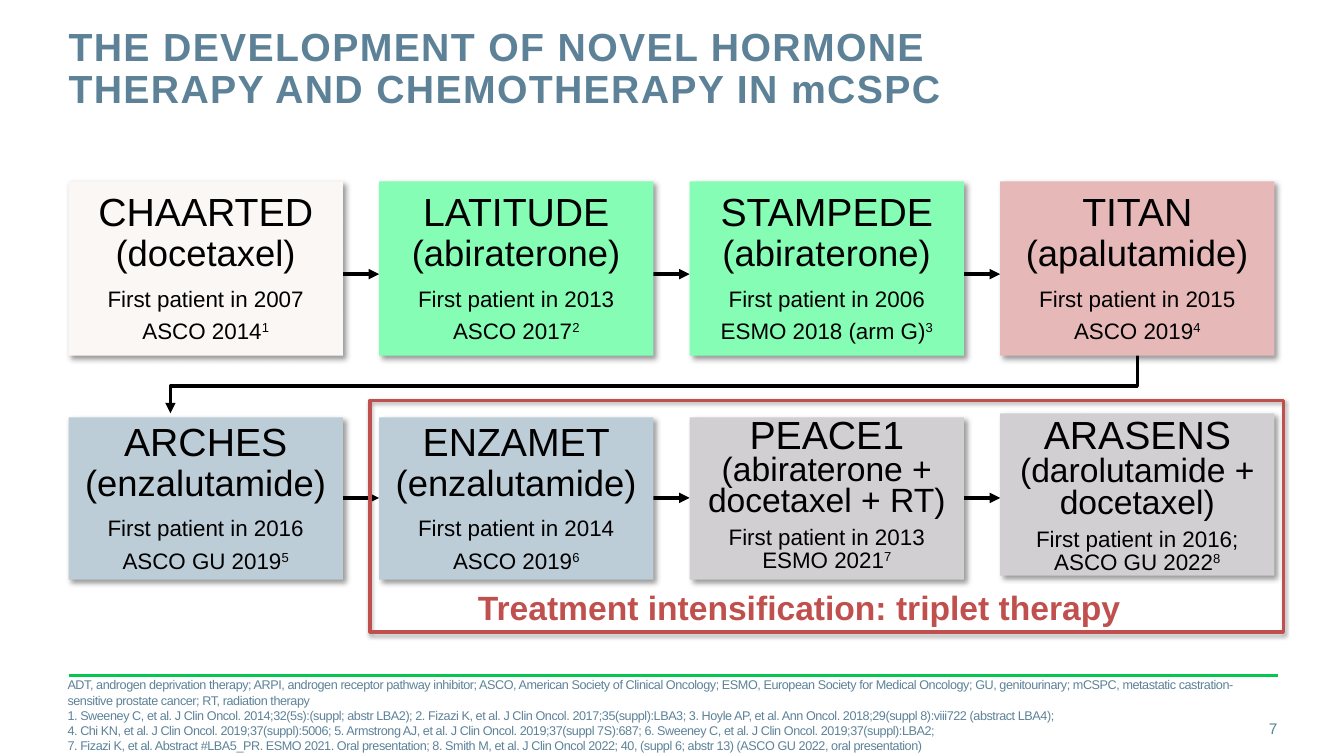
from itertools import pairwise

from lxml.etree import SubElement
from pptx import Presentation
from pptx.dml.color import RGBColor
from pptx.enum.shapes import MSO_CONNECTOR, MSO_SHAPE
from pptx.enum.text import MSO_ANCHOR, PP_ALIGN
from pptx.oxml.ns import qn
from pptx.util import Inches, Pt

SLATE, RED, BLACK = "5D8298", "C0504D", "000000"
CARD_LEFT, CARD_WIDTH, CARD_PITCH = 0.68, 2.72, 3.08

FIRST_ROW = [
    ("CHAARTED", "(docetaxel)", "First patient in 2007", "ASCO 2014", "1", "FBF7F5"),
    ("LATITUDE", "(abiraterone)", "First patient in 2013", "ASCO 2017", "2", "86FDB4"),
    ("STAMPEDE", "(abiraterone)", "First patient in 2006", "ESMO 2018 (arm G)", "3", "86FDB4"),
    ("TITAN", "(apalutamide)", "First patient in 2015", "ASCO 2019", "4", "E6B9B8"),
]
SECOND_ROW = [
    ("ARCHES", "(enzalutamide)", "First patient in 2016", "ASCO GU 2019", "5", "BDCDD7"),
    ("ENZAMET", "(enzalutamide)", "First patient in 2014", "ASCO 2019", "6", "BDCDD7"),
]
TRIPLETS = [
    ("PEACE1", "(abiraterone + docetaxel + RT)", "First patient in 2013", "ESMO 2021", "7"),
    ("ARASENS", "(darolutamide + docetaxel)", "First patient in 2016;", "ASCO GU 2022", "8"),
]
FOOTNOTES = [
    "ADT, androgen deprivation therapy; ARPI, androgen receptor pathway inhibitor; ASCO, American Society of Clinical Oncology; ESMO, European Society for Medical Oncology; GU, genitourinary; mCSPC, metastatic castration-sensitive prostate cancer; RT, radiation therapy",
    "1. Sweeney C, et al. J Clin Oncol. 2014;32(5s):(suppl; abstr LBA2); 2. Fizazi K, et al. J Clin Oncol. 2017;35(suppl):LBA3; 3. Hoyle AP, et al. Ann Oncol. 2018;29(suppl 8):viii722 (abstract LBA4);",
    "4. Chi KN, et al. J Clin Oncol. 2019;37(suppl):5006; 5. Armstrong AJ, et al. J Clin Oncol. 2019;37(suppl 7S):687; 6. Sweeney C, et al. J Clin Oncol. 2019;37(suppl):LBA2;",
    "7. Fizazi K, et al. Abstract #LBA5_PR. ESMO 2021. Oral presentation; 8. Smith M, et al. J Clin Oncol 2022; 40, (suppl 6; abstr 13) (ASCO GU 2022, oral presentation)",
]


def color(hex_value):
    """Turn a hex string into a colour."""
    return RGBColor.from_string(hex_value)


def style_font(font, size, ink, bold=False):
    """Apply the slide's typeface with a size and colour."""
    font.name, font.size, font.bold = "Arial", Pt(size), bold
    font.color.rgb = color(ink)


def add_shadow(shape, opacity, blur, distance, angle):
    """Give a shape a soft black outer shadow."""
    shape.shadow.inherit = False
    effects = shape._element.spPr.find(qn("a:effectLst"))
    shadow = SubElement(effects, qn("a:outerShdw"), blurRad=str(Pt(blur)),
                        dist=str(Pt(distance)), dir=str(angle * 60000),
                        algn="tl", rotWithShape="0")
    ink = SubElement(shadow, qn("a:srgbClr"), val=BLACK)
    SubElement(ink, qn("a:alpha"), val=str(opacity * 1000))


def add_text(slide, box, lines, size, ink, bold=False, tracking=0, leading=None,
             align=PP_ALIGN.LEFT, anchor=MSO_ANCHOR.TOP):
    """Write one paragraph per line in a box without margins."""
    frame = slide.shapes.add_textbox(*map(Inches, box)).text_frame
    frame.word_wrap, frame.vertical_anchor = True, anchor
    frame.margin_left = frame.margin_right = frame.margin_top = frame.margin_bottom = 0
    for index, line in enumerate(lines):
        paragraph = frame.add_paragraph() if index else frame.paragraphs[0]
        paragraph.alignment, paragraph.line_spacing = align, leading
        run = paragraph.add_run()
        run.text = line
        if tracking:
            run._r.get_or_add_rPr().set("spc", str(tracking))
        style_font(paragraph.font, size, ink, bold)


def add_line(slide, start, end, ink, weight):
    """Draw a straight line without a shadow."""
    line = slide.shapes.add_connector(MSO_CONNECTOR.STRAIGHT,
                                      *map(Inches, (*start, *end)))
    line.line.color.rgb, line.line.width = color(ink), Pt(weight)
    SubElement(line._element.spPr, qn("a:effectLst"))
    return line


def add_arrowhead(shape):
    """Put a triangle at the end of a line."""
    SubElement(shape.line._get_or_add_ln(), qn("a:tailEnd"), type="triangle")


def add_row_arrows(slide, y):
    """Link the four cards of a row from left to right."""
    lefts = [CARD_LEFT + CARD_PITCH * column for column in range(4)]
    for left, following in pairwise(lefts):
        add_arrowhead(add_line(slide, (left + CARD_WIDTH - 0.2, y), (following, y), BLACK, 2.5))


def add_return_arrow(slide):
    """Lead from the end of the first row to the start of the second."""
    corners = [(Inches(x), Inches(y)) for x, y in
               [(11.28, 3.52), (11.28, 3.83), (1.69, 3.83), (1.69, 4.1)]]
    builder = slide.shapes.build_freeform(*corners[0])
    builder.add_line_segments(corners[1:], close=False)
    route = builder.convert_to_shape()
    route.shadow.inherit = False
    route.fill.background()
    route.line.color.rgb, route.line.width = color(BLACK), Pt(2.5)
    add_arrowhead(route)


def add_card(slide, column, top, height, fill, top_margin=0.09):
    """Draw an empty trial card and return its text frame."""
    card = slide.shapes.add_shape(
        MSO_SHAPE.RECTANGLE, Inches(CARD_LEFT + CARD_PITCH * column), Inches(top),
        Inches(CARD_WIDTH), Inches(height))
    card.fill.solid()
    card.fill.fore_color.rgb = color(fill)
    card.line.fill.background()
    add_shadow(card, 40, 4, 3, 45)
    frame = card.text_frame
    frame.word_wrap, frame.vertical_anchor = True, MSO_ANCHOR.MIDDLE
    frame.margin_left = frame.margin_right = frame.margin_bottom = Inches(0.09)
    frame.margin_top = Inches(top_margin)
    return frame


def fill_paragraph(paragraph, runs, leading, after):
    """Write centred runs of (text, size, raised), with breaks at None."""
    paragraph.alignment = PP_ALIGN.CENTER
    paragraph.line_spacing, paragraph.space_after = leading, Pt(after)
    for part in runs:
        if part is None:
            paragraph.add_line_break()
            continue
        text, size, raised = part
        run = paragraph.add_run()
        run.text = text
        style_font(run.font, size, BLACK)
        if raised:
            run._r.get_or_add_rPr().set("baseline", "30000")


def add_trial(slide, column, top, height, trial):
    """Add a card for a trial of one drug."""
    name, drug, start, venue, reference, fill = trial
    frame = add_card(slide, column, top, height, fill)
    fill_paragraph(frame.paragraphs[0], [(name, 28, False), None, (drug, 26, False)], 0.9, 9.5)
    fill_paragraph(frame.add_paragraph(), [(start, 16, False)], 0.9, 6)
    fill_paragraph(frame.add_paragraph(), [(venue, 16, False), (reference, 16, True)], 0.9, 6)


def add_triplet(slide, column, top, margin, leading, after, trial):
    """Add a card for a trial of a drug combination."""
    name, drugs, start, venue, reference = trial
    frame = add_card(slide, column, top, 1.61, "D1CFD1", margin)
    fill_paragraph(frame.paragraphs[0], [(name, 28, False), None, (drugs, 24, False)],
                   Pt(leading), 6)
    fill_paragraph(frame.add_paragraph(), [(start, 16, False), None, (venue, 16, False),
                                           (reference, 16, True)], Pt(16.2), after)


def add_triplet_frame(slide):
    """Outline the intensification trials and label them."""
    outline = slide.shapes.add_shape(MSO_SHAPE.RECTANGLE, *map(Inches, (3.67, 3.97, 9.06, 2.3)))
    outline.fill.background()
    outline.line.color.rgb, outline.line.width = color(RED), Pt(2.25)
    add_shadow(outline, 35, 3.1, 1.8, 90)
    add_text(slide, (4.74, 5.82, 6.6, 0.4), ["Treatment intensification: triplet therapy"],
             24, RED, bold=True)


def main():
    """Build the slide and save it."""
    deck = Presentation()
    deck.slide_width, deck.slide_height = Inches(13.33), Inches(7.5)
    slide = deck.slides.add_slide(deck.slide_layouts[6])
    add_line(slide, (0.68, 6.7), (12.68, 6.7), "03C74F", 2)
    add_text(slide, (0.68, 0.27, 9.56, 0.88),
             ["THE DEVELOPMENT OF NOVEL HORMONE THERAPY AND CHEMOTHERAPY IN mCSPC"],
             28, SLATE, bold=True, tracking=100, leading=Pt(30))
    add_text(slide, (11.81, 7.03, 0.86, 0.4), ["7"], 11, SLATE,
             align=PP_ALIGN.RIGHT, anchor=MSO_ANCHOR.MIDDLE)
    add_text(slide, (0.67, 6.68, 11.83, 0.83), FOOTNOTES, 9, SLATE,
             tracking=-30, anchor=MSO_ANCHOR.MIDDLE)
    for y in (2.72, 4.94):
        add_row_arrows(slide, y)
    add_return_arrow(slide)
    for top, height, row in [(1.8, 1.73, FIRST_ROW), (4.14, 1.61, SECOND_ROW)]:
        for column, trial in enumerate(row):
            add_trial(slide, column, top, height, trial)
    add_triplet(slide, 2, 4.14, 0.12, 21.8, 0, TRIPLETS[0])
    add_triplet(slide, 3, 4.1, 0.2, 22.8, 6, TRIPLETS[1])
    add_triplet_frame(slide)
    deck.save("out.pptx")


if __name__ == "__main__":
    main()
